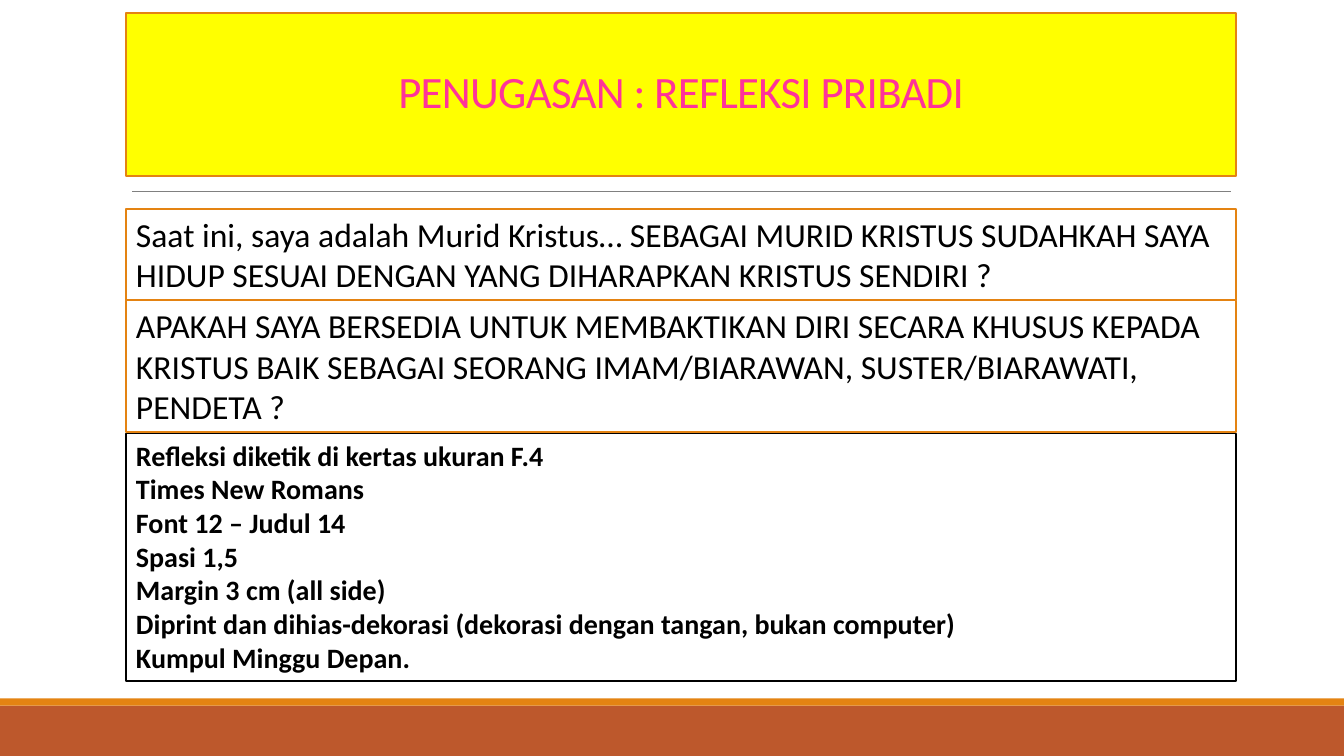
from pptx import Presentation
from pptx.dml.color import RGBColor
from pptx.enum import shapes, text
from pptx.oxml.ns import qn
from pptx.util import Inches, Pt
from lxml import etree

BLACK = RGBColor(0x00, 0x00, 0x00)
WHITE = RGBColor(0xFF, 0xFF, 0xFF)
YELLOW = RGBColor(0xFF, 0xFF, 0x00)
PINK = RGBColor(0xFF, 0x33, 0x99)
ORANGE = RGBColor(0xE4, 0x83, 0x12)
RUST = RGBColor(0xBD, 0x58, 0x2C)
GREY = RGBColor(0x80, 0x80, 0x80)

HEADING = "PENUGASAN : REFLEKSI PRIBADI"
QUESTION_FONT = {"name": "Calibri", "size": Pt(24)}
RULES_FONT = {"name": "Calibri", "size": Pt(20), "bold": True}
PANELS = [
    (2.07, 0.91, ORANGE, QUESTION_FONT, [
        "Saat ini, saya adalah Murid Kristus… SEBAGAI MURID KRISTUS SUDAHKAH SAYA "
        "HIDUP SESUAI DENGAN YANG DIHARAPKAN KRISTUS SENDIRI ?",
    ]),
    (2.98, 1.31, ORANGE, QUESTION_FONT, [
        "APAKAH SAYA BERSEDIA UNTUK MEMBAKTIKAN DIRI SECARA KHUSUS KEPADA KRISTUS "
        "BAIK SEBAGAI SEORANG IMAM/BIARAWAN, SUSTER/BIARAWATI, PENDETA ?",
    ]),
    (4.3, 2.46, BLACK, RULES_FONT, [
        "Refleksi diketik di kertas ukuran F.4",
        "Times New Romans",
        "Font 12 – Judul 14",
        "Spasi 1,5",
        "Margin 3 cm (all side)",
        "Diprint dan dihias-dekorasi (dekorasi dengan tangan, bukan computer)",
        "Kumpul Minggu Depan.",
    ]),
]
BANDS = [(7, 0.5, RUST), (6.93, 0.07, ORANGE)]
SLIDE_WIDTH, SLIDE_HEIGHT = 13.33, 7.5
LEFT, WIDTH = 1.25, 11.01


def apply(target, values):
    for name, value in values.items():
        setattr(target, name, value)


def paint(box, fill, outline=None):
    box.fill.solid()
    box.fill.fore_color.rgb = fill
    if outline is None:
        box.line.fill.background()
    else:
        box.line.color.rgb = outline
        box.line.width = Pt(1.25)


def write(paragraph, words, font, color):
    run = paragraph.add_run()
    run.text = words
    apply(run.font, font)
    run.font.color.rgb = color
    return run


def add_box(slide, left, top, width, height):
    box = slide.shapes.add_shape(
        shapes.MSO_SHAPE.RECTANGLE,
        Inches(left), Inches(top), Inches(width), Inches(height))
    box.shadow.inherit = False
    return box


def add_heading(slide):
    heading = slide.shapes.title
    apply(heading, {"left": Inches(LEFT), "top": Inches(0.13),
                    "width": Inches(WIDTH), "height": Inches(1.62)})
    paint(heading, YELLOW, ORANGE)
    apply(heading.text_frame, {"word_wrap": True,
                               "auto_size": text.MSO_AUTO_SIZE.NONE,
                               "vertical_anchor": text.MSO_ANCHOR.MIDDLE})
    paragraph = heading.text_frame.paragraphs[0]
    apply(paragraph, {"alignment": text.PP_ALIGN.CENTER, "line_spacing": 0.85})
    run = write(paragraph, HEADING, {"name": "Calibri", "size": Pt(32)}, PINK)
    run.font._element.set("spc", "-50")


def add_divider(slide):
    divider = slide.shapes.add_connector(
        shapes.MSO_CONNECTOR.STRAIGHT,
        Inches(1.31), Inches(1.9), Inches(12.21), Inches(1.9))
    divider.line.color.rgb = GREY
    divider.line.width = Pt(0.5)
    etree.SubElement(divider._element.spPr, qn("a:effectLst"))


def add_panel(slide, top, height, outline, font, lines):
    panel = add_box(slide, LEFT, top, WIDTH, height)
    paint(panel, WHITE, outline)
    frame = panel.text_frame
    apply(frame, {"word_wrap": True,
                  "auto_size": text.MSO_AUTO_SIZE.SHAPE_TO_FIT_TEXT,
                  "vertical_anchor": text.MSO_ANCHOR.TOP})
    for index, line in enumerate(lines):
        paragraph = frame.add_paragraph() if index else frame.paragraphs[0]
        paragraph.alignment = text.PP_ALIGN.LEFT
        write(paragraph, line, font, BLACK)


def main():
    deck = Presentation()
    apply(deck, {"slide_width": Inches(SLIDE_WIDTH),
                 "slide_height": Inches(SLIDE_HEIGHT)})
    slide = deck.slides.add_slide(deck.slide_layouts[5])
    for top, height, color in BANDS:
        paint(add_box(slide, 0, top, SLIDE_WIDTH, height), color)
    add_divider(slide)
    add_heading(slide)
    for panel in PANELS:
        add_panel(slide, *panel)
    deck.save("out.pptx")


if __name__ == "__main__":
    main()
